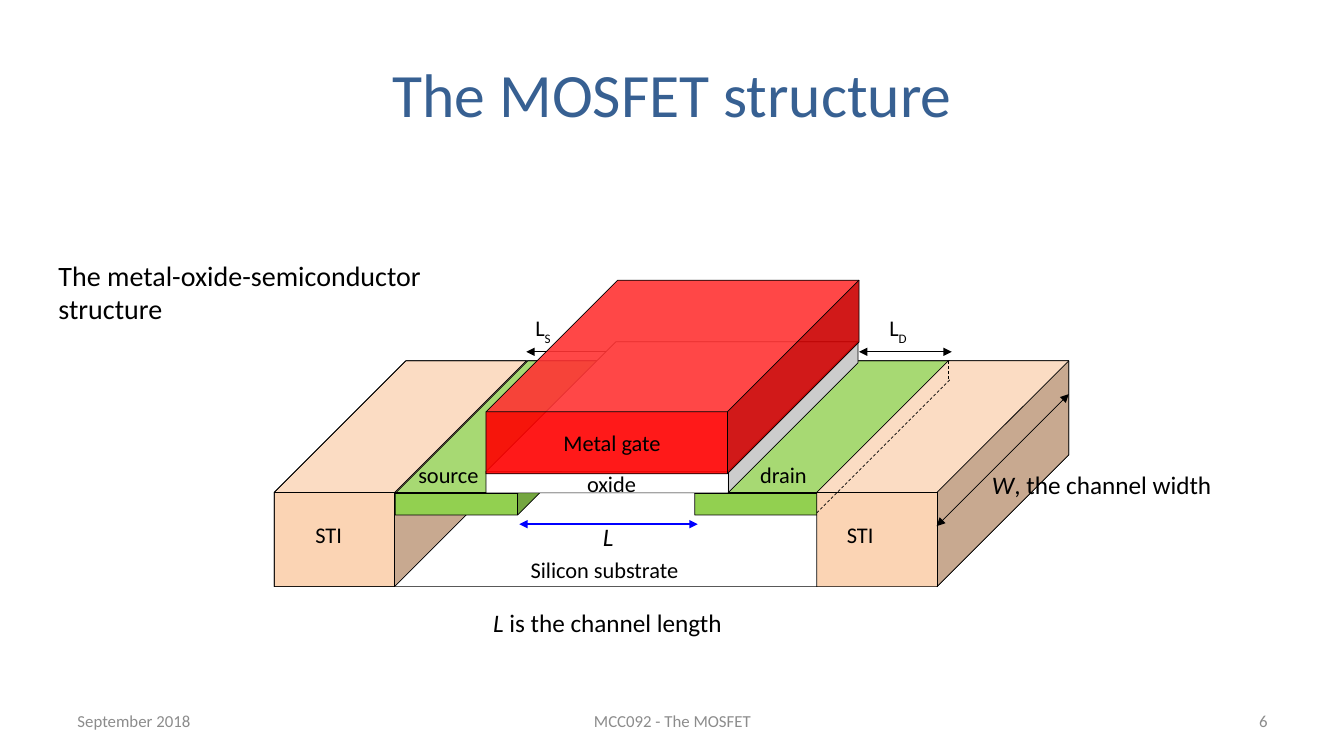
from dataclasses import dataclass

from lxml.etree import SubElement as Sub
from pptx import Presentation
from pptx.dml.color import RGBColor as RGB
from pptx.enum.dml import MSO_LINE as Dash
from pptx.enum.shapes import MSO_CONNECTOR as Conn, MSO_SHAPE as Shape
from pptx.enum.text import MSO_ANCHOR as Anchor, PP_ALIGN as Align
from pptx.oxml.ns import qn
from pptx.util import Inches, Pt


@dataclass(frozen=True)
class Theme:
    font: str = "Calibri"
    title: int = 44
    lead: int = 20
    note: int = 18
    label: int = 16
    foot: int = 12
    ink: str = "000000"
    head: str = "376092"
    grey: str = "8C8C8C"
    blue: str = "0000FF"
    sti: str = "FBD4B4"
    doped: str = "92D050"
    oxide: str = "FFFFFF"
    metal: str = "FF0000"


INSET = (0.1, 0.05, 0.1, 0.05)


def write(frame, text, theme, size=None, color=None, align=Align.LEFT,
          anchor=Anchor.TOP, inset=INSET, wrap=True, lead="", sub=""):
    """Fill a frame with an italic lead, plain text and a subscript."""
    frame.word_wrap = wrap
    frame.vertical_anchor = anchor
    (frame.margin_left, frame.margin_top,
     frame.margin_right, frame.margin_bottom) = map(Inches, inset)
    para = frame.paragraphs[0]
    para.alignment = align
    for part, kind in ((lead, "lead"), (text, "text"), (sub, "sub")):
        if not part:
            continue
        run = para.add_run()
        run.text = part
        font = run.font
        font.name = theme.font
        font.size = Pt(size or theme.label)
        font.color.rgb = RGB.from_string(color or theme.ink)
        font.italic = kind == "lead"
        if kind == "sub":
            run._r.get_or_add_rPr().set("baseline", "-30000")


class Board:
    def __init__(self, deck, theme):
        self.theme = theme
        self.slide = deck.slides.add_slide(deck.slide_layouts[5])
        self.shapes = self.slide.shapes

    def title(self, text, *box):
        hold = self.shapes.title
        hold.left, hold.top, hold.width, hold.height = map(Inches, box)
        write(hold.text_frame, text, self.theme, size=self.theme.title,
              color=self.theme.head, align=Align.CENTER, anchor=Anchor.MIDDLE)

    def text(self, text, *box, **style):
        hold = self.shapes.add_textbox(*map(Inches, box))
        write(hold.text_frame, text, self.theme, **style)

    def cube(self, *box, depth, fill=None, alpha=None):
        cube = self.shapes.add_shape(Shape.CUBE, *map(Inches, box))
        cube.shadow.inherit = False
        cube.adjustments[0] = depth
        cube.line.color.rgb = RGB.from_string(self.theme.ink)
        cube.line.width = Pt(0.5)
        if fill is None:
            cube.fill.background()
            return
        cube.fill.solid()
        cube.fill.fore_color.rgb = RGB.from_string(fill)
        if alpha:
            tone = cube._element.spPr.find(qn("a:solidFill"))[0]
            Sub(tone, qn("a:alpha"), val=str(alpha * 1000))

    def line(self, *ends, width=0.5, color=None, dash=False):
        """Draw a dashed line, or a solid one with arrows at both ends."""
        line = self.shapes.add_connector(Conn.STRAIGHT, *map(Inches, ends))
        line.line.color.rgb = RGB.from_string(color or self.theme.ink)
        line.line.width = Pt(width)
        if dash:
            line.line.dash_style = Dash.DASH
        else:
            for end in ("a:headEnd", "a:tailEnd"):
                Sub(line.line._get_or_add_ln(), qn(end), type="triangle")
        Sub(line._element.spPr, qn("a:effectLst"))


def main():
    deck = Presentation()
    deck.slide_width, deck.slide_height = Inches(13.33), Inches(7.5)
    look = Theme()
    board = Board(deck, look)
    mid = Align.CENTER
    body, top, tall = 2.72, 3.58, 2.24
    deep, thin = 0.583, 0.86

    board.title("The MOSFET structure", 0.67, 0.3, 12, 1.25)
    for text, left, width, align in (
            ("September 2018", 0.67, 3.11, Align.LEFT),
            ("MCC092 - The MOSFET", 4.56, 4.22, mid),
            ("6", 9.56, 3.11, Align.RIGHT)):
        board.text(text, left, 6.95, width, 0.4, size=look.foot,
                   color=look.grey, align=align, anchor=Anchor.MIDDLE)

    # Source and drain overlaps
    for sub, left, start, end in (("S", 5.31, 5.22, 6.13),
                                  ("D", 8.82, 8.52, 9.44)):
        board.line(start, 3.49, end, 3.49, width=0.75)
        board.text("L", left, 3.07, 0.63, 0.66, sub=sub,
                   inset=(0, 0.05, 0, 0.05))

    # Left isolation, doped regions and channel length
    board.cube(body, top, 2.5, tall, depth=deep, fill=look.sti)
    board.text("STI", 3.03, 5.12, 1.02, 0.66)
    for left in (3.92, 6.89):
        board.cube(left, top, 2.53, 1.53, depth=thin, fill=look.doped)
    for text, left in (("source", 4.05), ("drain", 7.44)):
        board.text(text, left, 4.53, 1.38, 0.66)
    board.line(6.92, 5.2, 5.15, 5.2, width=1, color=look.blue)
    board.text("is the channel length", 4.6, 5.98, 2.85, 0.44,
               lead="L ", size=look.note, align=mid)
    board.text("", 5.88, 5.12, 0.31, 0.4, lead="L", size=look.note, wrap=False)
    board.text("The metal-oxide-semiconductor structure", 0.52, 2.53, 3.94,
               0.76, size=look.lead, inset=(0.06, 0.03, 0.02, 0.03))

    # Substrate and gate stack
    board.cube(body, top, 7.88, tall, depth=deep)
    board.text("Silicon substrate", 4.93, 5.47, 2.13, 0.41, align=mid)
    board.cube(4.82, 3.39, 3.69, 1.5, depth=thin, fill=look.oxide)
    board.text("oxide", 5.34, 4.61, 1.45, 0.41, align=mid)
    board.cube(4.82, 2.78, 3.7, 1.92, depth=0.68, fill=look.metal, alpha=90)
    board.text("Metal gate", 5.18, 4.21, 1.78, 0.41, align=mid)

    # Right isolation, hidden edges and channel width
    board.cube(8.1, top, 2.5, tall, depth=deep, fill=look.sti)
    board.text("STI", 8.3, 5.12, 1.38, 0.66)
    board.line(9.42, 3.77, 8.1, 5.09, dash=True)
    board.line(9.41, top, 9.41, 3.77, dash=True)
    board.line(10.6, 3.91, 9.29, 5.22)
    board.text(", the channel width", 9.74, 4.61, 2.75, 0.66,
               lead="W", size=look.note)

    deck.save("out.pptx")


if __name__ == "__main__":
    main()
